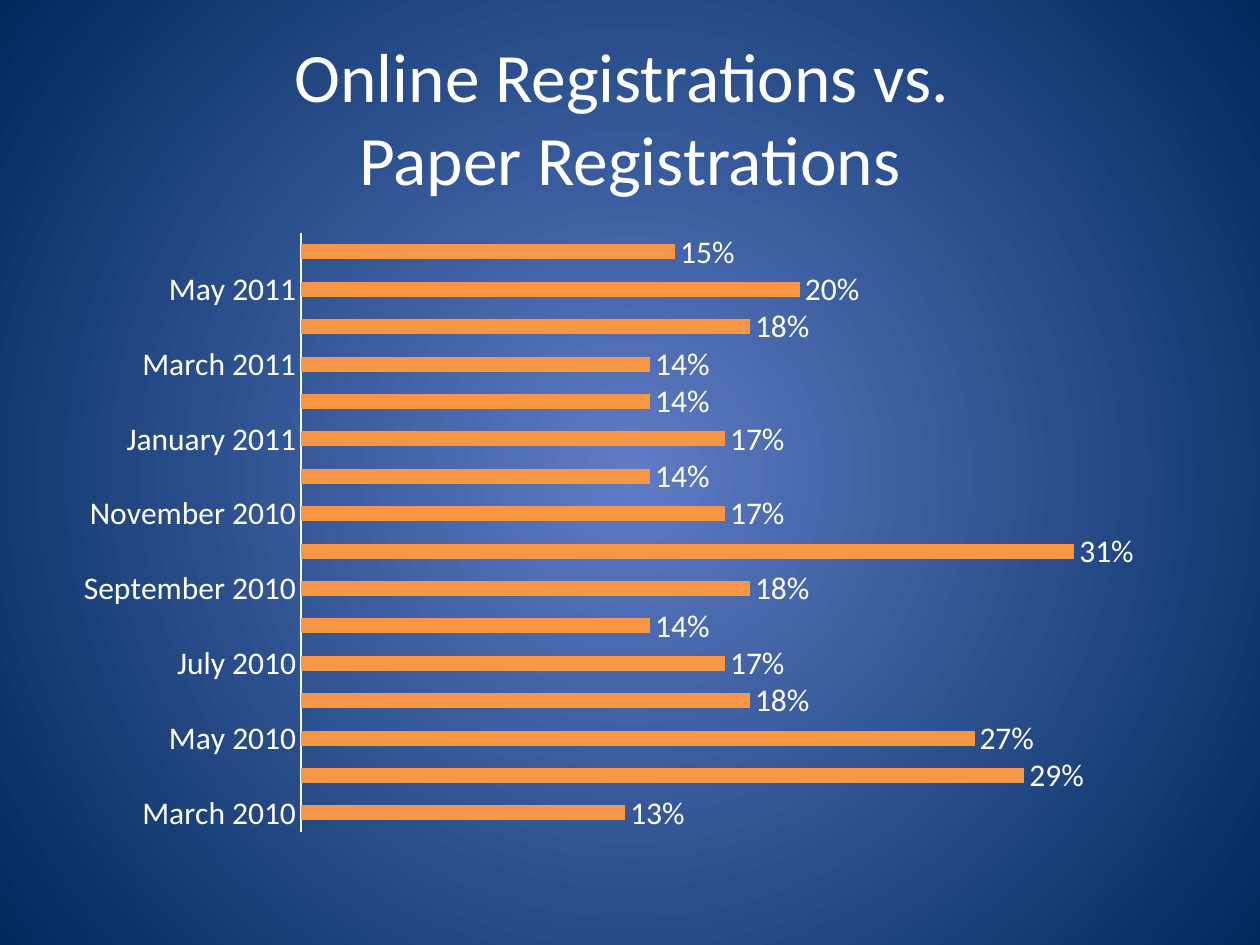
from pptx import Presentation, util as u
from pptx.chart import data as cd
from pptx.dml.color import RGBColor
from pptx.enum import chart as ch, text as tx
from pptx.oxml import parse_xml
from pptx.oxml.ns import nsdecls, qn

COLS = {"text": "FFFFFF", "bar": "F79646", "mid": "5E7CC5", "edge": "00295C"}
MONTHS = ("January February March April May June July August "
          "September October November December").split()
RATES = [13, 29, 27, 18, 17, 14, 18, 31, 17, 14, 17, 14, 14, 18, 20, 15]
START = 2
CATS = [f"{MONTHS[n % 12]} {2010 + n // 12}"
        for n in range(START, START + len(RATES))]


def put(obj, vals):
    """Set each attribute named in a dict."""
    for key, val in vals.items():
        setattr(obj, key, val)


class Deck:
    """Hold the style and the current slide."""

    def __init__(self, face="Calibri"):
        """Start a deck with one title-only slide."""
        self.face = face
        self.prs = Presentation()
        put(self.prs, {"slide_width": u.Cm(25.4), "slide_height": u.Cm(19.05)})
        self.slide = self.prs.slides.add_slide(self.prs.slide_layouts[5])

    def tint(self, name):
        """Return a named colour."""
        return RGBColor.from_string(COLS[name])

    def style(self, font, size):
        """Format a font in the deck's style."""
        put(font, {"name": self.face, "size": u.Pt(size), "bold": False})
        font.color.rgb = self.tint("text")

    def back(self, inner, outer):
        """Fill the background with a round gradient."""
        fill = self.slide.background.fill
        fill.gradient()
        for stop, name in zip(fill.gradient_stops, (inner, outer)):
            stop.color.rgb = self.tint(name)
        line = next(self.slide.element.iter(qn("a:lin")))
        line.getparent().replace(line, parse_xml(
            f'<a:path {nsdecls("a")} path="circle"><a:fillToRect l="50000" '
            't="50000" r="50000" b="50000"/></a:path>'))

    def title(self, words, box, size):
        """Place and format the title."""
        shape = self.slide.shapes.title
        put(shape, dict(zip(("left", "top", "width", "height"), map(u.Cm, box))))
        frame = shape.text_frame
        put(frame, {"text": words, "word_wrap": True,
                    "auto_size": tx.MSO_AUTO_SIZE.NONE,
                    "vertical_anchor": tx.MSO_ANCHOR.MIDDLE})
        for para in frame.paragraphs:
            para.alignment = tx.PP_ALIGN.CENTER
            for run in para.runs:
                self.style(run.font, size)

    def bars(self, cats, vals, box, size):
        """Add a bar chart with value labels."""
        data = cd.CategoryChartData(number_format="0%")
        data.categories = cats
        data.add_series("Series 1", vals)
        chart = self.slide.shapes.add_chart(
            ch.XL_CHART_TYPE.BAR_CLUSTERED, *map(u.Cm, box), data).chart
        put(chart, {"has_legend": False, "has_title": False})
        self.style(chart.font, size)
        plot = chart.plots[0]
        put(plot, {"gap_width": 150, "vary_by_categories": False,
                   "has_data_labels": True})
        fill = plot.series[0].format.fill
        fill.solid()
        fill.fore_color.rgb = self.tint("bar")
        put(plot.data_labels, {
            "show_value": True, "number_format": "0%",
            "number_format_is_linked": False,
            "position": ch.XL_LABEL_POSITION.OUTSIDE_END})
        self.style(plot.data_labels.font, size)
        put(chart.value_axis, {
            "visible": False, "has_major_gridlines": False,
            "minimum_scale": 0, "maximum_scale": 0.35})
        axis = chart.category_axis
        put(axis, {"major_tick_mark": ch.XL_TICK_MARK.NONE,
                   "minor_tick_mark": ch.XL_TICK_MARK.NONE})
        axis.format.line.color.rgb = self.tint("text")
        axis.format.line.width = u.Pt(1)
        root = chart.element
        next(root.iter(qn("c:noMultiLvlLbl"))).addprevious(
            parse_xml(f'<c:tickLblSkip {nsdecls("c")} val="2"/>'))
        area = next(root.iter(qn("c:plotArea")))
        for old in area.findall(qn("c:layout")):
            area.remove(old)
        spots = {"x": 0.21, "y": 0.02, "w": 0.77, "h": 0.96}
        rules = "".join(f'<c:{k}Mode val="edge"/>' for k in "xy")
        rules += "".join(f'<c:{k} val="{v}"/>' for k, v in spots.items())
        area.insert(0, parse_xml(
            f'<c:layout {nsdecls("c")}><c:manualLayout>'
            f'<c:layoutTarget val="inner"/>{rules}'
            '</c:manualLayout></c:layout>'))


def main():
    """Build the slide and save it."""
    deck = Deck()
    deck.back("mid", "edge")
    deck.title("Online Registrations vs. \vPaper Registrations",
               (1.27, 0.76, 22.86, 3.18), 39.6)
    deck.bars(CATS, [rate / 100 for rate in RATES],
              (1.27, 4.45, 22.86, 12.57), 18)
    deck.prs.save("out.pptx")


if __name__ == "__main__":
    main()
